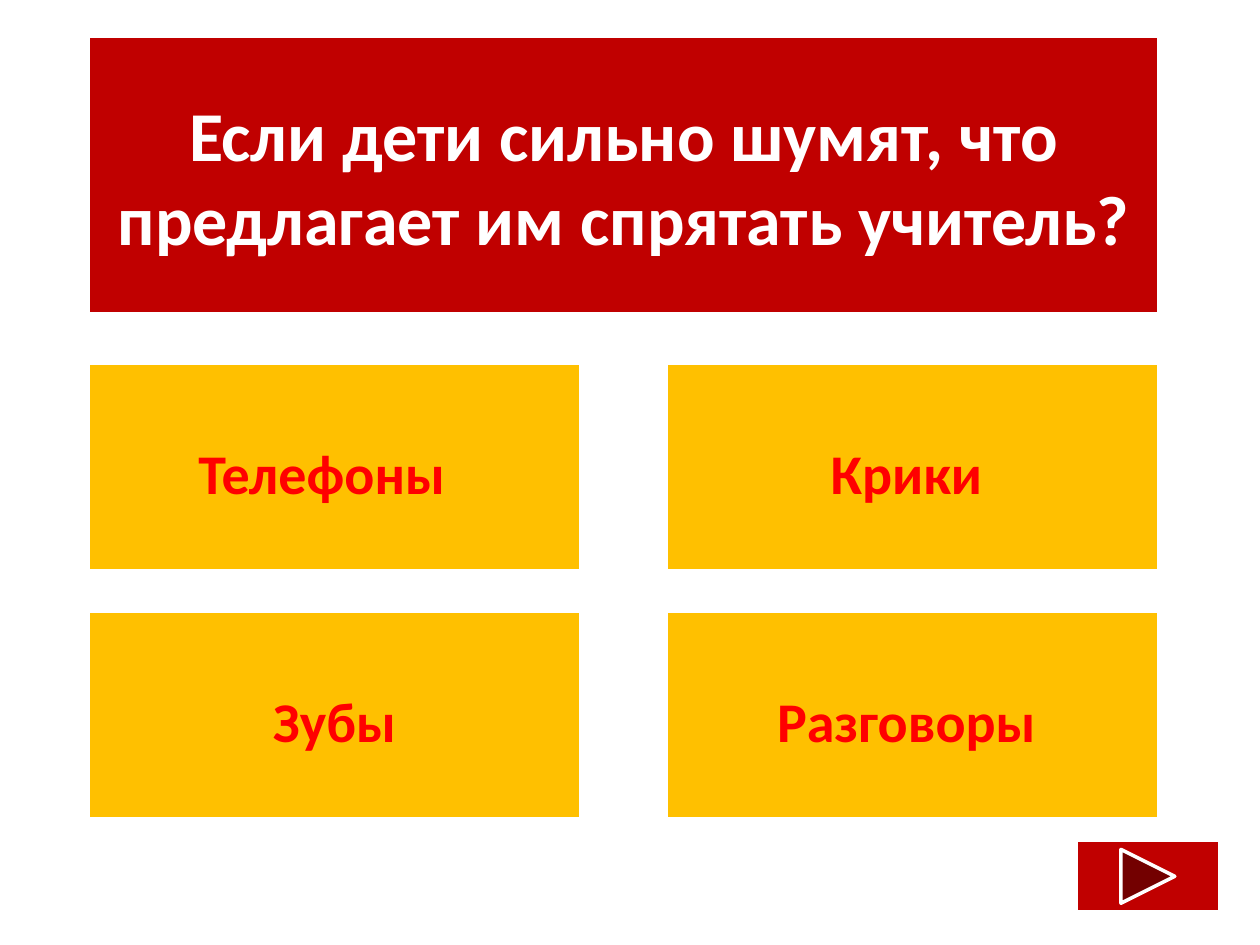
from pptx import Presentation
from pptx.dml.color import RGBColor
from pptx.enum import shapes, text
from pptx.util import Inches, Pt

RED = RGBColor(0xC0, 0x00, 0x00)
GOLD = RGBColor(0xFF, 0xC0, 0x00)
ANSWER_RED = RGBColor(0xFF, 0x00, 0x00)
WHITE = RGBColor(0xFF, 0xFF, 0xFF)

QUESTION = "Если дети сильно шумят, что предлагает им спрятать учитель?"
ANSWERS = [("Телефоны", 0.2), ("Крики", 0.1), ("Зубы", 0), ("Разговоры", 0.1)]


def paint(shape, fill_color):
    shape.fill.solid()
    shape.fill.fore_color.rgb = fill_color
    shape.line.color.rgb = WHITE
    shape.line.width = Pt(2)
    shape.shadow.inherit = False


def write(shape, wording, size, color):
    frame = shape.text_frame
    frame.text = wording
    frame.word_wrap = True
    frame.auto_size = text.MSO_AUTO_SIZE.NONE
    frame.vertical_anchor = text.MSO_ANCHOR.MIDDLE
    paragraph = frame.paragraphs[0]
    paragraph.alignment = text.PP_ALIGN.CENTER
    paragraph.font.name = "Calibri"
    paragraph.font.size = Pt(size)
    paragraph.font.bold = True
    paragraph.font.color.rgb = color
    return paragraph


def add_question(slide, left, top, width, height):
    title = slide.shapes.title
    title.left, title.top = Inches(left), Inches(top)
    title.width, title.height = Inches(width), Inches(height)
    paint(title, RED)
    write(title, QUESTION, 40, WHITE)


def add_answers(slide, left, top, width, height):
    card_width, card_height = 3.91, 1.65
    column_step = width - card_width
    row_step = height - card_height
    for index, (answer, right_indent) in enumerate(ANSWERS):
        row, column = divmod(index, 2)
        card = slide.shapes.add_shape(
            shapes.MSO_SHAPE.RECTANGLE,
            Inches(left + column * column_step), Inches(top + row * row_step),
            Inches(card_width), Inches(card_height))
        paint(card, GOLD)
        paragraph = write(card, answer, 32, ANSWER_RED)
        paragraph.line_spacing = 1.15
        paragraph.space_after = Pt(10)
        card.text_frame.margin_right = Inches(0.1 + right_indent)


def add_next_button(slide, left, top, width, height):
    button = slide.shapes.add_shape(
        shapes.MSO_SHAPE.ACTION_BUTTON_FORWARD_OR_NEXT,
        Inches(left), Inches(top), Inches(width), Inches(height))
    paint(button, RED)


def main():
    presentation = Presentation()
    presentation.slide_width = Inches(10)
    presentation.slide_height = Inches(7.5)
    slide = presentation.slides.add_slide(presentation.slide_layouts[5])
    add_question(slide, 0.7, 0.29, 8.5, 2.2)
    add_answers(slide, 0.7, 2.88, 8.5, 3.62)
    add_next_button(slide, 8.54, 6.67, 1.14, 0.57)
    presentation.save("out.pptx")


if __name__ == "__main__":
    main()
